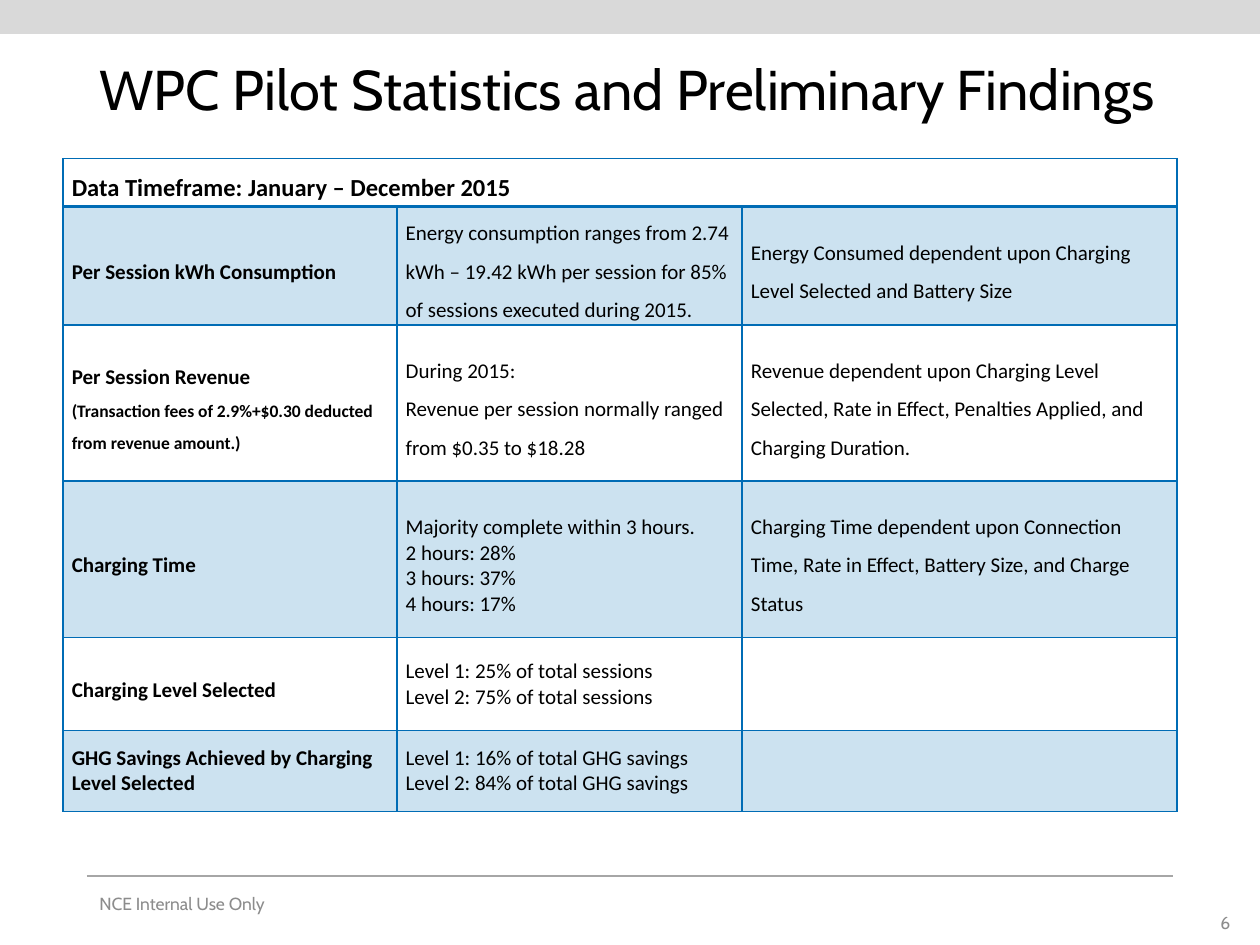
from lxml import etree
from pptx import Presentation
from pptx.dml.color import RGBColor
from pptx.enum import shapes, text
from pptx.oxml.ns import qn
from pptx.util import Inches, Pt

COLORS = {"black": "000000", "blue": "006CB5", "band": "CCE2F0",
          "bar": "D9D9D9", "rule": "A6A6A6", "footer": "8C8C8C"}
COLUMN_WIDTHS = [2.65, 2.74, 3.45]
ROW_HEIGHTS = [0.38, 0.94, 1.24, 1.24, 0.74, 0.64]
HEADING = "Data Timeframe: January – December 2015"
WIDE = 1.5

# Each cell is a list of (wording, size, line spacing) paragraphs.
FINDINGS = [
    [[("Per Session kWh Consumption", 12, WIDE)],
     [("Energy consumption ranges from 2.74 kWh – 19.42 kWh per session "
       "for 85% of sessions executed during 2015.", 12, WIDE)],
     [("Energy Consumed dependent upon Charging Level Selected and "
       "Battery Size", 12, WIDE)]],
    [[("Per Session Revenue", 12, WIDE),
      ("(Transaction fees of 2.9%+$0.30 deducted from revenue amount.)",
       10, WIDE)],
     [("During 2015:", 12, WIDE),
      ("Revenue per session normally ranged from $0.35 to $18.28", 12, WIDE)],
     [("Revenue dependent upon Charging Level Selected, Rate in Effect, "
       "Penalties Applied, and Charging Duration.", 12, WIDE)]],
    [[("Charging Time", 12, WIDE)],
     [("Majority complete within 3 hours.", 12, WIDE),
      ("2 hours: 28%", 12, 1), ("3 hours: 37%", 12, 1),
      ("4 hours: 17%", 12, 1)],
     [("Charging Time dependent upon Connection Time, Rate in Effect, "
       "Battery Size, and Charge Status", 12, WIDE)]],
    [[("Charging Level Selected", 12, WIDE)],
     [("Level 1: 25% of total sessions", 12, 1),
      ("Level 2: 75% of total sessions", 12, 1)],
     []],
    [[("GHG Savings Achieved by Charging Level Selected", 12, 1)],
     [("Level 1: 16% of total GHG savings", 12, 1),
      ("Level 2: 84% of total GHG savings", 12, 1)],
     []],
]


def rgb(color):
    return RGBColor.from_string(COLORS[color])


def set_attributes(target, values):
    for name, value in values.items():
        setattr(target, name, value)


def write_paragraph(paragraph, wording, size, font, color="black",
                    bold=False, **layout):
    set_attributes(paragraph, layout)
    run = paragraph.add_run()
    run.text = wording
    set_attributes(run.font, {"size": Pt(size), "name": font, "bold": bold})
    run.font.color.rgb = rgb(color)


def add_label(slide, box, wording, size, color, **layout):
    frame = slide.shapes.add_textbox(*map(Inches, box)).text_frame
    set_attributes(frame, {"word_wrap": True, "margin_right": Inches(0.05),
                           "margin_left": Inches(0.1),
                           "vertical_anchor": text.MSO_ANCHOR.MIDDLE})
    write_paragraph(frame.paragraphs[0], wording, size, "Cabin", color,
                    **layout)


def add_top_bar(slide):
    bar = slide.shapes.add_shape(shapes.MSO_SHAPE.RECTANGLE, 0, 0,
                                 Inches(10), Inches(0.27))
    bar.shadow.inherit = False
    bar.fill.solid()
    bar.fill.fore_color.rgb = rgb("bar")
    bar.line.fill.background()


def add_footer_rule(slide):
    rule = slide.shapes.add_connector(
        shapes.MSO_CONNECTOR.STRAIGHT,
        *map(Inches, (0.69, 6.95, 9.31, 6.95)))
    rule.line.color.rgb = rgb("rule")
    rule.line.width = Pt(1)
    etree.SubElement(rule._element.spPr, qn("a:effectLst"))


def set_borders(cell, top=1, bottom=1):
    """Outline a cell; the lines must come before its fill in the XML."""
    properties = cell._tc.get_or_add_tcPr()
    widths = {"L": 1, "R": 1, "T": top, "B": bottom}
    for position, (side, width) in enumerate(widths.items()):
        line = etree.Element(qn(f"a:ln{side}"), w=str(Pt(width)))
        fill = etree.SubElement(line, qn("a:solidFill"))
        etree.SubElement(fill, qn("a:srgbClr"), val=COLORS["blue"])
        properties.insert(position, line)


def fill_cell(cell, paragraphs, bold, banded):
    set_attributes(cell, {"margin_left": Inches(0.07),
                          "margin_right": Inches(0.07),
                          "margin_top": 0, "margin_bottom": 0,
                          "vertical_anchor": text.MSO_ANCHOR.MIDDLE})
    if banded:
        cell.fill.solid()
        cell.fill.fore_color.rgb = rgb("band")
    else:
        cell.fill.background()
    frame = cell.text_frame
    for index, (wording, size, spacing) in enumerate(paragraphs):
        paragraph = frame.add_paragraph() if index else frame.paragraphs[0]
        write_paragraph(paragraph, wording, size, "Calibri", bold=bold,
                        line_spacing=float(spacing))


def add_findings_table(slide):
    table = slide.shapes.add_table(
        len(ROW_HEIGHTS), len(COLUMN_WIDTHS), Inches(0.5), Inches(1.26),
        Inches(sum(COLUMN_WIDTHS)), Inches(sum(ROW_HEIGHTS))).table
    set_attributes(table, {"first_row": False, "horz_banding": False})
    for column, width in zip(table.columns, COLUMN_WIDTHS):
        column.width = Inches(width)
    for row, height in zip(table.rows, ROW_HEIGHTS):
        row.height = Inches(height)

    table.cell(0, 0).merge(table.cell(0, len(COLUMN_WIDTHS) - 1))
    rows = [[[(HEADING, 14, WIDE)], [], []]] + FINDINGS
    for r, row in enumerate(rows):
        for c, paragraphs in enumerate(row):
            cell = table.cell(r, c)
            fill_cell(cell, paragraphs, bold=c == 0, banded=r % 2 == 1)
            set_borders(cell, top=2 if r == 1 else 1,
                        bottom=2 if r == 0 else 1)
    table.cell(0, 0).vertical_anchor = text.MSO_ANCHOR.TOP


def main():
    deck = Presentation()
    deck.slide_width, deck.slide_height = Inches(10), Inches(7.5)
    slide = deck.slides.add_slide(deck.slide_layouts[6])
    add_top_bar(slide)
    add_footer_rule(slide)
    add_label(slide, (0.69, 0.4, 8.62, 0.67),
              "WPC Pilot Statistics and Preliminary Findings", 32, "black",
              line_spacing=0.9)
    add_findings_table(slide)
    add_label(slide, (9.4, 7.11, 0.6, 0.43), "6", 10, "footer",
              alignment=text.PP_ALIGN.CENTER)
    add_label(slide, (0.69, 6.97, 2.25, 0.4), "NCE Internal Use Only", 10,
              "footer")
    deck.save("out.pptx")


if __name__ == "__main__":
    main()
